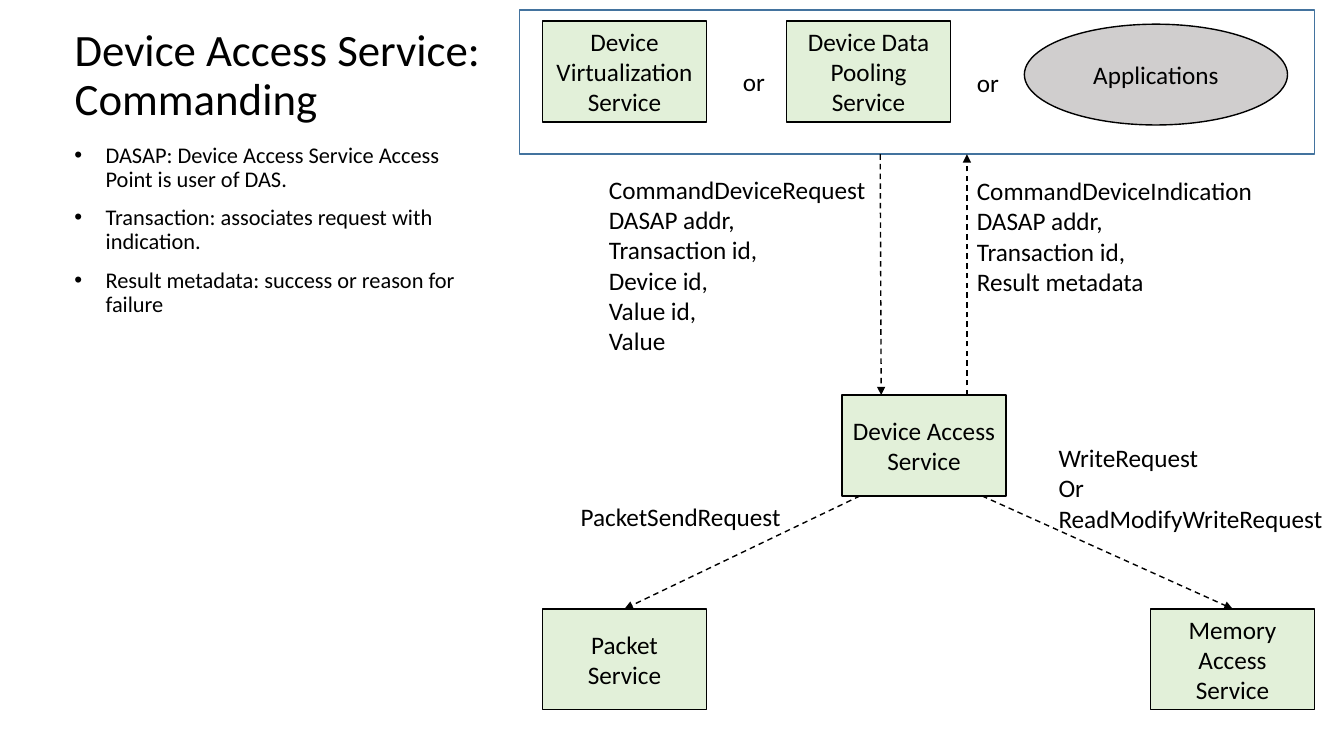
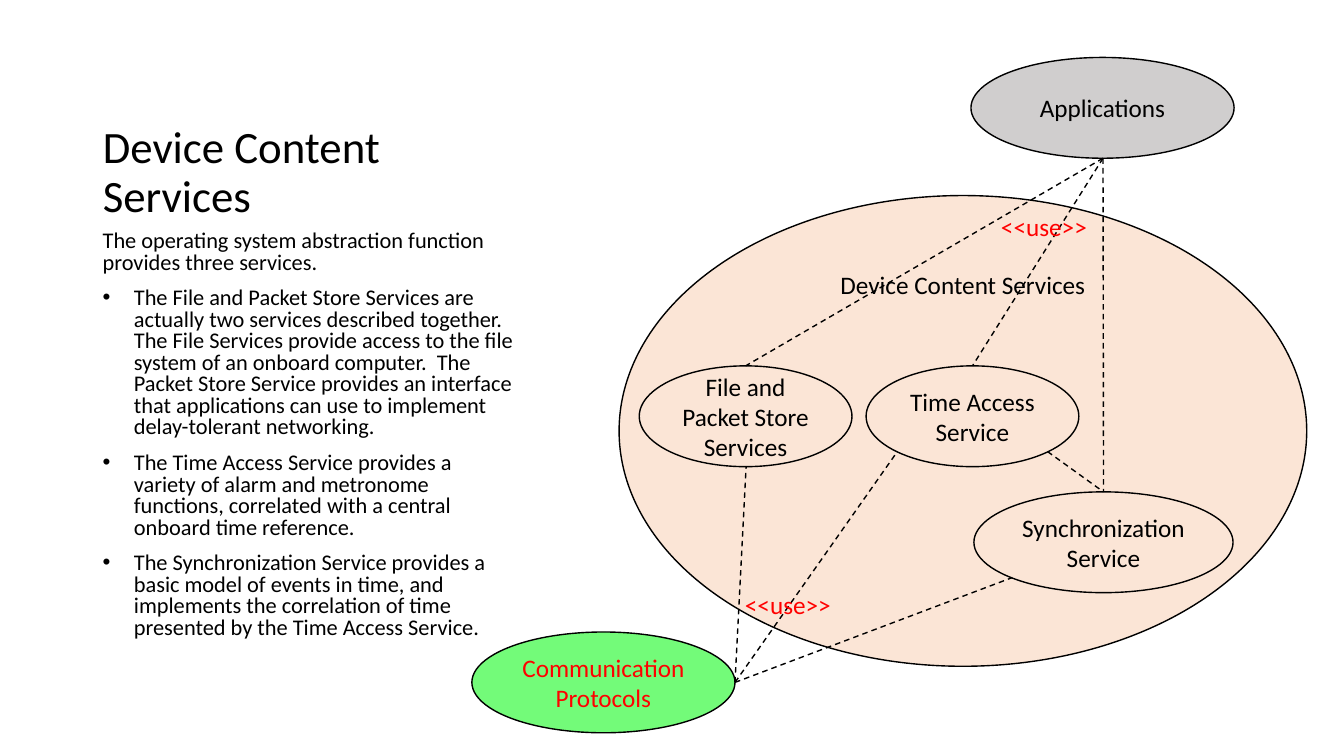
from dataclasses import dataclass
from math import cos, radians, sin

from lxml.etree import SubElement
from pptx import Presentation
from pptx.dml.color import RGBColor
from pptx.enum.dml import MSO_LINE
from pptx.enum.shapes import MSO_CONNECTOR, MSO_SHAPE
from pptx.enum.text import MSO_ANCHOR, MSO_AUTO_SIZE, PP_ALIGN
from pptx.oxml.ns import qn
from pptx.util import Pt

PX = 9144
TOP = 0
TITLE_ONLY = 5
TEXT_WIDTH = 430
NODE_HEIGHT = 100
SERVICE_WIDTH = 163
ACTOR_WIDTH = 261
CONTENT_WIDTH = 211


@dataclass(frozen=True)
class Theme:
    font: str = "Calibri"
    ink: str = "000000"
    accent: str = "FF0000"
    frame: str = "43739E"
    service: str = "E2F0D9"
    actor: str = "D0CECE"
    content: str = "FBE5D6"
    protocol: str = "73FB79"
    title_size: int = 32
    body_size: int = 16
    label_size: int = 18
    line_width: int = 1


THEME = Theme()


def emu(*lengths):
    return [length * PX for length in lengths]


def color(value):
    return RGBColor.from_string(value)


def write(frame, lines, size, ink=THEME.ink, align=PP_ALIGN.LEFT, spacing=None):
    for index, line in enumerate(lines):
        para = frame.add_paragraph() if index else frame.paragraphs[0]
        para.text = line
        para.alignment = align
        if spacing:
            para.line_spacing = spacing
        for span in para.runs:
            span.font.name = THEME.font
            span.font.size = Pt(size)
            span.font.color.rgb = color(ink)


def add_page(deck, title, left, top, height):
    page = deck.slides.add_slide(deck.slide_layouts[TITLE_ONLY])
    box = page.shapes.title
    box.left, box.top, box.width, box.height = emu(left, top, TEXT_WIDTH, height)
    frame = box.text_frame
    frame.word_wrap = True
    frame.auto_size = MSO_AUTO_SIZE.NONE
    frame.vertical_anchor = MSO_ANCHOR.BOTTOM
    write(frame, [title], THEME.title_size, spacing=0.9)
    return page


def add_bullet(para):
    props = para._p.get_or_add_pPr()
    props.set("marL", str(31 * PX))
    props.set("indent", str(-31 * PX))
    SubElement(props, qn("a:buFont")).set("typeface", "Arial")
    SubElement(props, qn("a:buChar")).set("char", "•")


def add_body(page, lines, left, top, height, spacing, intro=0):
    box = page.shapes.add_textbox(*emu(left, top, TEXT_WIDTH, height))
    frame = box.text_frame
    frame.word_wrap = True
    write(frame, lines, THEME.body_size, spacing=spacing)
    for index, para in enumerate(frame.paragraphs):
        para.space_before = Pt(10)
        if index >= intro:
            add_bullet(para)


def add_node(page, kind, text, left, top, width, fill, height=NODE_HEIGHT,
             ink=THEME.ink, line=THEME.ink, anchor=MSO_ANCHOR.MIDDLE):
    node = page.shapes.add_shape(kind, *emu(left, top, width, height))
    node.shadow.inherit = False
    if fill:
        node.fill.solid()
        node.fill.fore_color.rgb = color(fill)
    else:
        node.fill.background()
    node.line.color.rgb = color(line)
    node.line.width = Pt(THEME.line_width)
    if text:
        frame = node.text_frame
        frame.word_wrap = True
        frame.vertical_anchor = anchor
        write(frame, [text], THEME.label_size, ink, PP_ALIGN.CENTER)
    return node


def add_service(page, text, left, top):
    return add_node(page, MSO_SHAPE.RECTANGLE, text, left, top,
                    SERVICE_WIDTH, THEME.service)


def add_oval(page, text, left, top, width, fill, **options):
    return add_node(page, MSO_SHAPE.OVAL, text, left, top, width, fill, **options)


def add_label(page, lines, left, top, width, ink=THEME.ink):
    height = round(10 + 30.3 * len(lines))
    box = page.shapes.add_textbox(*emu(left, top, width, height))
    frame = box.text_frame
    frame.word_wrap = False
    frame.auto_size = MSO_AUTO_SIZE.SHAPE_TO_FIT_TEXT
    write(frame, lines, THEME.label_size, ink)


def rim(oval, degrees):
    angle = radians(degrees)
    x = oval.left + oval.width / 2 * (1 + cos(angle))
    y = oval.top + oval.height / 2 * (1 + sin(angle))
    return round(x / PX), round(y / PX)


def add_dashed_line(page, start, end=None, top_of=None, arrow=False):
    end = end or start
    line = page.shapes.add_connector(MSO_CONNECTOR.STRAIGHT, *emu(*start, *end))
    if top_of is not None:
        line.end_connect(top_of, TOP)
    line.line.color.rgb = color(THEME.ink)
    line.line.width = Pt(THEME.line_width)
    line.line.dash_style = MSO_LINE.DASH
    props = line.element.spPr
    if arrow:
        SubElement(props.find(qn("a:ln")), qn("a:tailEnd")).set("type", "triangle")
    SubElement(props, qn("a:effectLst"))


def build_commanding(deck):
    page = add_page(deck, "Device Access Service:\nCommanding", 64, 21, 108)
    add_body(page, [
        "DASAP: Device Access Service Access Point is user of DAS.",
        "Transaction: associates request with indication.",
        "Result metadata: success or reason for failure",
    ], 64, 138, 542, 0.9)

    add_node(page, MSO_SHAPE.RECTANGLE, "", 515, 10, 789, None,
             height=143, line=THEME.frame)
    add_oval(page, "Applications", 1016, 24, ACTOR_WIDTH, THEME.actor)
    add_service(page, "Device Virtualization Service", 538, 21)
    add_service(page, "Device Data Pooling Service", 780, 21)
    add_service(page, "Device Access Service", 835, 392)
    packet = add_service(page, "Packet Service", 538, 604)
    memory = add_service(page, "Memory Access Service", 1141, 604)

    add_dashed_line(page, (873, 153), (874, 392), arrow=True)
    add_dashed_line(page, (959, 392), (959, 153), arrow=True)
    add_dashed_line(page, (853, 492), top_of=packet, arrow=True)
    add_dashed_line(page, (974, 492), top_of=memory, arrow=True)

    for lines, left, top, width in [
        (["or"], 727, 61, 42),
        (["or"], 959, 62, 42),
        (["CommandDeviceRequest", "DASAP addr,", "Transaction id,",
          "Device id,", "Value id,", "Value"], 594, 168, 278),
        (["CommandDeviceIndication", "DASAP addr,", "Transaction id,",
          "Result metadata"], 959, 169, 297),
        (["PacketSendRequest"], 566, 492, 221),
        (["WriteRequest", "Or", "ReadModifyWriteRequest"], 1040, 434, 285),
    ]:
        add_label(page, lines, left, top, width)


def build_content(deck):
    page = add_page(deck, "Device Content Services", 92, 50, 175)
    add_body(page, [
        "The operating system abstraction function provides three services.",
        "The File and Packet Store Services are actually two services described "
        "together.  The File Services provide access to the file system of an "
        "onboard computer.  The Packet Store Service provides an interface that "
        "applications can use to implement delay-tolerant networking.",
        "The Time Access Service provides a variety of alarm and metronome "
        "functions, correlated with a central onboard time reference.",
        "The Synchronization Service provides a basic model of events in time, and "
        "implements the correlation of time presented by the Time Access Service.",
    ], 92, 225, 417, 0.8, intro=1)

    add_oval(page, "Device Content Services", 614, 194, 682, THEME.content,
             height=467, anchor=MSO_ANCHOR.TOP)
    applications = add_oval(page, "Applications", 963, 57, ACTOR_WIDTH, THEME.actor)
    store = add_oval(page, "File and Packet Store Services", 634, 363,
                     CONTENT_WIDTH, THEME.content)
    time = add_oval(page, "Time Access Service", 859, 363,
                    CONTENT_WIDTH, THEME.content)
    sync = add_oval(page, "Synchronization Service", 966, 488, 257, THEME.content)
    protocols = add_oval(page, "Communication\nProtocols", 468, 627, ACTOR_WIDTH,
                         THEME.protocol, ink=THEME.accent)

    for service in (store, time, sync):
        add_dashed_line(page, rim(applications, 90), top_of=service)
    add_dashed_line(page, rim(time, 45), top_of=sync)
    for service, degrees in ((store, 90), (time, 135), (sync, 135)):
        add_dashed_line(page, rim(protocols, 0), rim(service, degrees))

    for left, top in ((983, 205), (729, 580)):
        add_label(page, ["<<use>>"], left, top, 106, THEME.accent)


def main():
    deck = Presentation()
    deck.slide_width, deck.slide_height = emu(1333, 750)
    build_commanding(deck)
    build_content(deck)
    deck.save("out.pptx")


if __name__ == "__main__":
    main()
